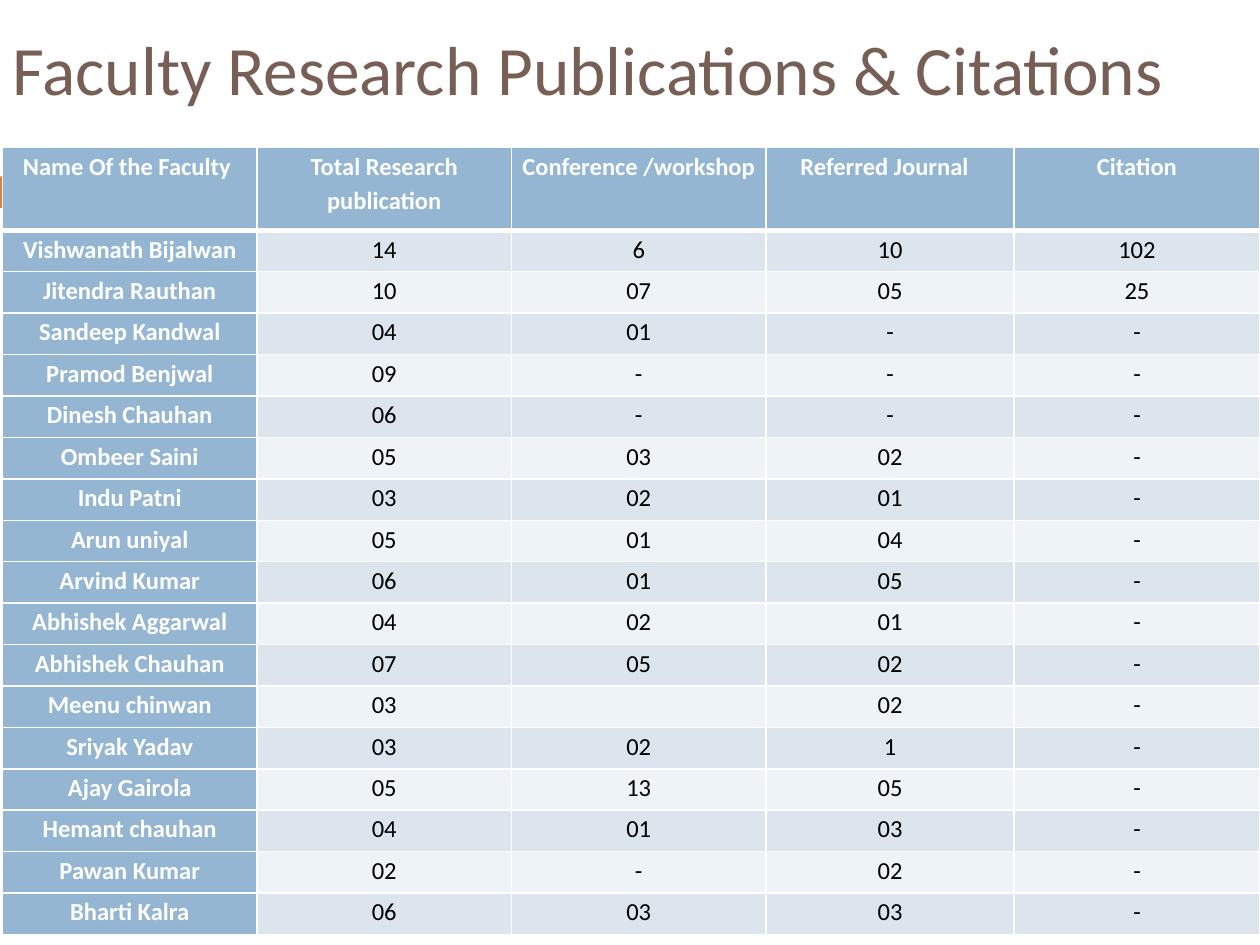
import lxml.etree
import pptx
import pptx.dml.color
import pptx.enum.shapes
import pptx.enum.text
import pptx.oxml.ns
import pptx.util

COLORS = {
    "title": "775F55", "accent": "DD8047", "main": "94B6D2", "white": "FFFFFF",
    "black": "000000", "odd": "DCE5EE", "even": "EEF3F7",
}
ALIGN = pptx.enum.text.PP_ALIGN
ANCHOR = pptx.enum.text.MSO_ANCHOR
UNIT = 0.1  # grid cell in inches: the slide is 100 columns by 75 rows

HEADINGS = ["Name Of the Faculty ", "Total Research publication",
            "Conference /workshop", "Referred Journal  ", "Citation"]
FACULTY = [
    ("Vishwanath Bijalwan", "14", "6", "10", "102"),
    ("Jitendra Rauthan", "10", "07", "05", "25"),
    ("Sandeep Kandwal", "04", "01", "-", "-"),
    ("Pramod Benjwal", "09", "-", "-", "-"),
    ("Dinesh Chauhan", "06", "-", "-", "-"),
    ("Ombeer Saini", "05", "03", "02", "-"),
    ("Indu Patni", "03", "02", "01", "-"),
    ("Arun uniyal", "05", "01", "04", "-"),
    ("Arvind Kumar", "06", "01", "05", "-"),
    ("Abhishek Aggarwal", "04", "02", "01", "-"),
    ("Abhishek Chauhan", "07", "05", "02", "-"),
    ("Meenu chinwan", "03", "", "02", "-"),
    ("Sriyak Yadav", "03", "02", "1", "-"),
    ("Ajay Gairola", "05", "13", "05", "-"),
    ("Hemant chauhan", "04", "01", "03", "-"),
    ("Pawan Kumar", "02", "-", "02", "-"),
    ("Bharti Kalra", "06", "03", "03", "-"),
]


def grid(cells):
    return pptx.util.Inches(cells * UNIT)


def paint(fill, color):
    fill.solid()
    fill.fore_color.rgb = pptx.dml.color.RGBColor.from_string(COLORS[color])


def write(frame, text, size=14, color="black", bold=False, font="Calibri",
          align=ALIGN.CENTER, spacing=1.15):
    paragraph = frame.paragraphs[0]
    paragraph.alignment = align
    paragraph.line_spacing = spacing
    if not text:  # an empty cell keeps the height of its row
        lxml.etree.SubElement(paragraph._p, pptx.oxml.ns.qn("a:endParaRPr"), sz=str(size * 100))
        return
    run = paragraph.add_run()
    run.text = text
    run.font.name, run.font.size, run.font.bold = font, pptx.util.Pt(size), bold
    run.font.color.rgb = pptx.dml.color.RGBColor.from_string(COLORS[color])


def draw_borders(cell, bottom=1):
    properties = cell._tc.get_or_add_tcPr()
    widths = {"lnL": 1, "lnR": 1, "lnT": 1, "lnB": bottom}
    for position, (side, points) in enumerate(widths.items()):
        line = lxml.etree.Element(pptx.oxml.ns.qn(f"a:{side}"), w=str(pptx.util.Pt(points)))
        fill = lxml.etree.SubElement(line, pptx.oxml.ns.qn("a:solidFill"))
        lxml.etree.SubElement(fill, pptx.oxml.ns.qn("a:srgbClr"), val=COLORS["white"])
        properties.insert(position, line)


class SlideBuilder:
    def __init__(self, deck):
        self.slide = deck.slides.add_slide(deck.slide_layouts[5])
        paint(self.slide.background.fill, "white")

    def title(self, text, left, top, width, height):
        heading = self.slide.shapes.title
        heading.left, heading.top = grid(left), grid(top)
        heading.width, heading.height = grid(width), grid(height)
        frame = heading.text_frame
        frame.auto_size = pptx.enum.text.MSO_AUTO_SIZE.NONE
        frame.vertical_anchor = ANCHOR.MIDDLE
        write(frame, text, size=39.6, color="title", align=ALIGN.LEFT, spacing=1.0)

    def bar(self, color, left, top, width, height):
        band = self.slide.shapes.add_shape(
            pptx.enum.shapes.MSO_SHAPE.RECTANGLE,
            grid(left), grid(top), grid(width), grid(height))
        band.shadow.inherit = False
        paint(band.fill, color)
        band.line.fill.background()

    def table(self, rows, column_widths, left, top, height):
        publications = self.slide.shapes.add_table(
            len(rows), len(column_widths), grid(left), grid(top),
            grid(sum(column_widths)), grid(height)).table
        for column, width in zip(publications.columns, column_widths):
            column.width = grid(width)
        row_height = height / (len(rows) + 1)  # the header is two rows high
        for r, values in enumerate(rows):
            publications.rows[r].height = grid(row_height * (1 if r else 2))
            for c, value in enumerate(values):
                self.table_cell(publications.cell(r, c), value, r, c)

    def table_cell(self, cell, value, r, c):
        is_heading = r == 0 or c == 0
        cell.margin_left = cell.margin_right = pptx.util.Inches(0.07)
        cell.margin_top = cell.margin_bottom = 0
        cell.vertical_anchor = ANCHOR.TOP
        paint(cell.fill, "main" if is_heading else "odd" if r % 2 else "even")
        draw_borders(cell, bottom=1 if r else 3)
        write(cell.text_frame, value, color="white" if is_heading else "black", bold=is_heading)


def main():
    deck = pptx.Presentation()
    deck.slide_width, deck.slide_height = grid(100), grid(75)
    builder = SlideBuilder(deck)

    # Title
    builder.title("Faculty Research Publications & Citations", 0, 0, 98.3, 10.8)

    # Theme bars behind the table
    builder.bar("accent", 0, 14, 5.8, 2.5)
    builder.bar("main", 6.5, 14, 93.5, 2.5)

    # Publications of each faculty member
    builder.table([HEADINGS, *FACULTY], [20.2, 20.2, 20.2, 19.7, 19.5],
                  left=0.2, top=11.7, height=62.5)

    deck.save("out.pptx")


if __name__ == "__main__":
    main()
